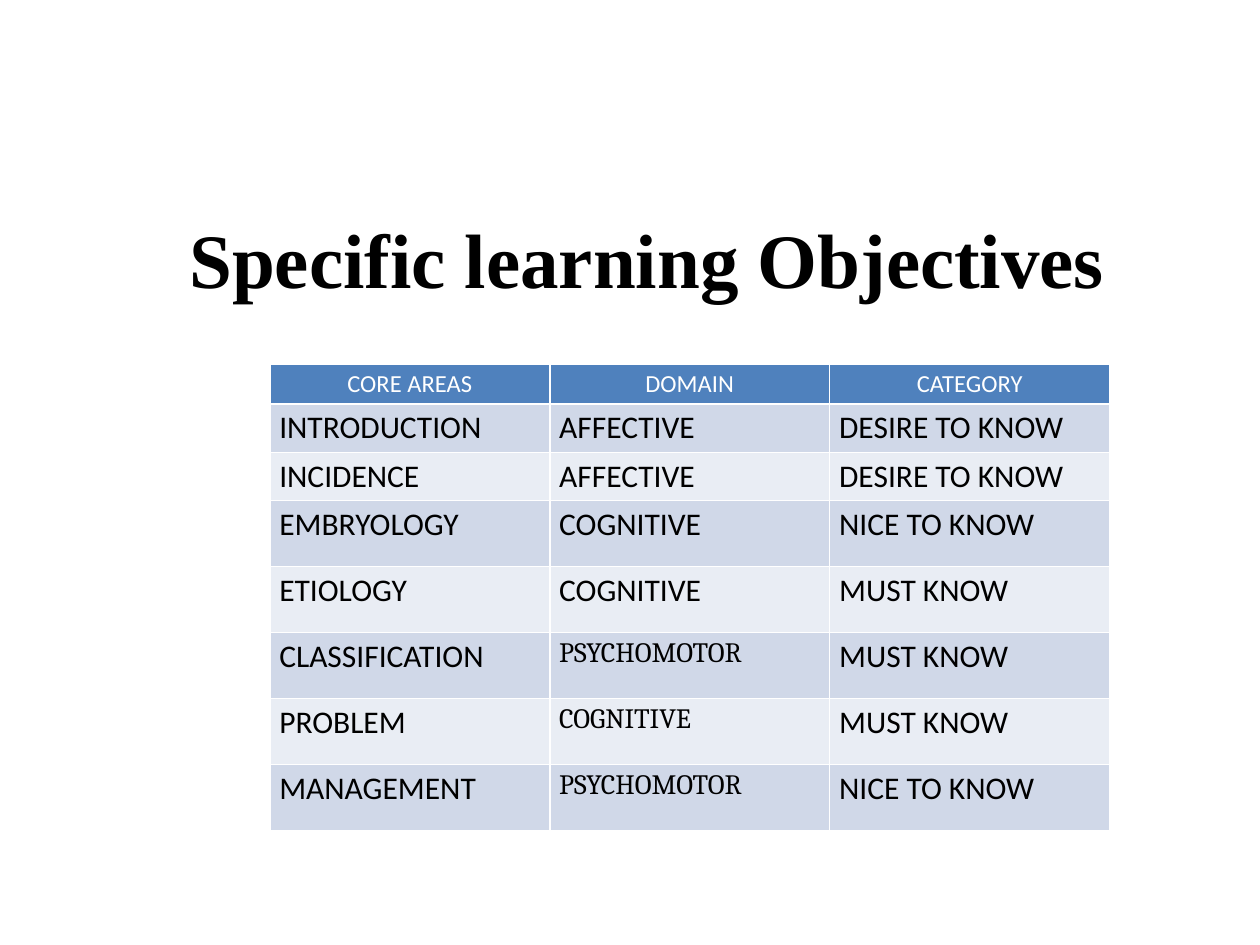
from dataclasses import dataclass

from pptx import Presentation
from pptx import util as u
from pptx.dml.color import RGBColor
from pptx.enum import text


@dataclass(frozen=True)
class Theme:
    ink: RGBColor = RGBColor.from_string("000000")
    header_ink: RGBColor = RGBColor.from_string("FFFFFF")
    header_fill: RGBColor = RGBColor.from_string("4F81BD")
    bands: tuple = (RGBColor.from_string("D0D8E8"), RGBColor.from_string("E9EDF4"))
    title_font: str = "Times New Roman"
    body_font: str = "Calibri"
    accent_font: str = "Cambria"
    title_size: u.Pt = u.Pt(44)
    header_size: u.Pt = u.Pt(14)
    body_size: u.Pt = u.Pt(18)
    accent_size: u.Pt = u.Pt(16)


THEME = Theme()
HEADERS = ("CORE AREAS", "DOMAIN", "CATEGORY")
OBJECTIVES = (
    ("INTRODUCTION", "AFFECTIVE", "DESIRE TO KNOW"),
    ("INCIDENCE", "AFFECTIVE", "DESIRE TO KNOW"),
    ("EMBRYOLOGY", "COGNITIVE", "NICE TO KNOW"),
    ("ETIOLOGY", "COGNITIVE", "MUST KNOW"),
    ("CLASSIFICATION", "PSYCHOMOTOR", "MUST KNOW"),
    ("PROBLEM", "COGNITIVE", "MUST KNOW"),
    ("MANAGEMENT", "PSYCHOMOTOR", "NICE TO KNOW"),
)
SHORT_ROWS = 3
SHORT_HEIGHT, TALL_HEIGHT = u.Cm(0.76), u.Cm(1.33)
ACCENT_CELLS = {(row, 1) for row in (5, 6, 7)}


def style_font(font, name, size, color, bold=False):
    font.name = name
    font.size = size
    font.bold = bold
    font.color.rgb = color


def place_title(slide, left, top, width, height):
    title = slide.shapes.title
    title.left, title.top, title.width, title.height = left, top, width, height
    title.text_frame.vertical_anchor = text.MSO_ANCHOR.MIDDLE
    title.text_frame.word_wrap = True
    paragraph = title.text_frame.paragraphs[0]
    paragraph.text = "Specific learning Objectives"
    paragraph.alignment = text.PP_ALIGN.CENTER
    style_font(paragraph.font, THEME.title_font, THEME.title_size, THEME.ink, bold=True)


def fill_cell(cell, label, row, column):
    cell.margin_left = cell.margin_right = u.Cm(0.19)
    cell.margin_top = cell.margin_bottom = u.Cm(0.1)
    paragraph = cell.text_frame.paragraphs[0]
    paragraph.text = label
    cell.fill.solid()
    if row == 0:
        cell.fill.fore_color.rgb = THEME.header_fill
        paragraph.alignment = text.PP_ALIGN.CENTER
        style_font(paragraph.font, THEME.body_font, THEME.header_size, THEME.header_ink)
        return
    cell.fill.fore_color.rgb = THEME.bands[(row - 1) % 2]
    if (row, column) in ACCENT_CELLS:
        style_font(paragraph.font, THEME.accent_font, THEME.accent_size, THEME.ink)
    else:
        style_font(paragraph.font, THEME.body_font, THEME.body_size, THEME.ink)


def place_objectives_table(slide, left, top, width):
    rows = (HEADERS, *OBJECTIVES)
    heights = [SHORT_HEIGHT if row < SHORT_ROWS else TALL_HEIGHT for row in range(len(rows))]
    table = slide.shapes.add_table(
        len(rows), len(HEADERS), left, top, width, sum(heights)
    ).table
    for row, labels in enumerate(rows):
        table.rows[row].height = heights[row]
        for column, label in enumerate(labels):
            fill_cell(table.cell(row, column), label, row, column)


def main():
    presentation = Presentation()
    presentation.slide_width, presentation.slide_height = u.Cm(25.4), u.Cm(19.05)
    slide = presentation.slides.add_slide(presentation.slide_layouts[5])
    place_title(slide, u.Cm(3.4), u.Cm(4.04), u.Cm(19.3), u.Cm(2.29))
    place_objectives_table(slide, u.Cm(5.44), u.Cm(7.34), u.Cm(16.93))
    presentation.save("out.pptx")


if __name__ == "__main__":
    main()
